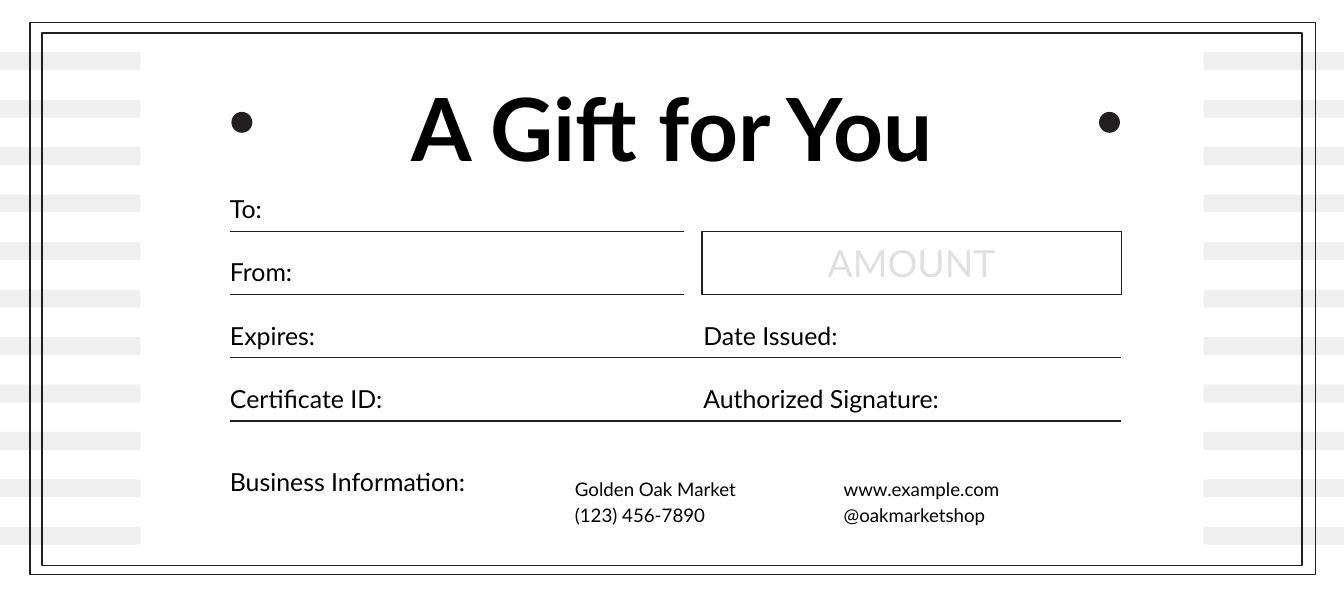
import pptx
import pptx.dml.color
import pptx.enum.shapes
import pptx.enum.text
import pptx.oxml.ns
import pptx.util
from lxml import etree

INK = pptx.dml.color.RGBColor(0x23, 0x1F, 0x20)
BLACK = pptx.dml.color.RGBColor(0x00, 0x00, 0x00)
STRIPE = pptx.dml.color.RGBColor(0xEF, 0xEF, 0xEF)
PALE = pptx.dml.color.RGBColor(0xE0, 0xE0, 0xE0)

FONT = "Lato"
WIDTH, HEIGHT = 9, 4
LABEL_SIZE, DETAIL_SIZE = 12, 9
LABEL_HEIGHT = 0.2
LINE_WIDTH = pptx.util.Pt(0.75)

SHAPE = pptx.enum.shapes.MSO_SHAPE
ALIGN = pptx.enum.text.PP_ALIGN
ANCHOR = pptx.enum.text.MSO_ANCHOR


def inches(*lengths):
    return [pptx.util.Inches(length) for length in lengths]


def add_shape(slide, kind, box, fill=None, outline=None):
    shape = slide.shapes.add_shape(kind, *inches(*box))
    shape.shadow.inherit = False
    if fill is None:
        shape.fill.background()
    else:
        shape.fill.solid()
        shape.fill.fore_color.rgb = fill
    if outline is None:
        shape.line.fill.background()
    else:
        shape.line.color.rgb = outline
        shape.line.width = LINE_WIDTH
    return shape


def write(shape, text, size, color=BLACK, bold=False, align=ALIGN.LEFT,
          spacing=1.0, margin=0, anchor=ANCHOR.TOP):
    frame = shape.text_frame
    frame.word_wrap = True
    frame.vertical_anchor = anchor
    frame.margin_left, frame.margin_top, frame.margin_right, frame.margin_bottom = inches(*[margin] * 4)
    frame.text = text
    for paragraph in frame.paragraphs:
        paragraph.alignment = align
        paragraph.line_spacing = spacing
        for run in paragraph.runs:
            run.font.name = FONT
            run.font.size = pptx.util.Pt(size)
            run.font.bold = bold
            run.font.color.rgb = color


def add_text(slide, box, text, size, **style):
    write(slide.shapes.add_textbox(*inches(*box)), text, size, **style)


def add_rule(slide, left, right, y):
    rule = slide.shapes.add_connector(
        pptx.enum.shapes.MSO_CONNECTOR.STRAIGHT, *inches(left, y, right, y))
    rule.line.color.rgb = INK
    rule.line.width = LINE_WIDTH
    properties = rule._element.spPr
    etree.SubElement(properties, pptx.oxml.ns.qn("a:effectLst"))


def add_stripes(slide, box, count=11, thickness=0.12):
    left, top, width, height = box
    pitch = (height - thickness) / (count - 1)
    for row in range(count):
        add_shape(slide, SHAPE.RECTANGLE, (left, top + row * pitch, width, thickness), fill=STRIPE)


def add_frame(slide):
    for box in ((0.2, 0.15, 8.61, 3.7), (0.28, 0.22, 8.44, 3.57)):
        add_shape(slide, SHAPE.RECTANGLE, box, outline=INK)


def add_title(slide, box, dot=0.14):
    left, top, width, height = box
    add_text(slide, box, "A Gift for You", 42, bold=True, align=ALIGN.CENTER, margin=0.1)
    for x in (left + 0.01, left + width - dot + 0.04):
        add_shape(slide, SHAPE.OVAL, (x, top + 0.35, dot, dot), fill=INK)


def add_form(slide, box):
    """Rows of labels above rules, with the amount box beside the second row."""
    left, top, width, height = box
    rows = (("To:",), ("From:",), ("Expires:", "Date Issued:"),
            ("Certificate ID:", "Authorized Signature:"))
    drop = 0.25  # from the top of a label to its rule
    pitch = (height - drop) / (len(rows) - 1)
    right_column = left + 3.17
    for index, labels in enumerate(rows):
        label_top = top + index * pitch
        for x, label in zip((left, right_column), labels):
            add_text(slide, (x, label_top, 2.8, LABEL_HEIGHT), label, LABEL_SIZE)
        rule_width = width if len(labels) == 2 else 3.04
        add_rule(slide, left, left + rule_width, label_top + drop)

    # Amount box
    amount = add_shape(slide, SHAPE.RECTANGLE,
                       (left + 3.16, top + drop, width - 3.16, pitch), outline=INK)
    write(amount, "AMOUNT", 18, color=PALE, align=ALIGN.CENTER, anchor=ANCHOR.MIDDLE)


def add_business(slide, box):
    left, top, width, height = box
    add_text(slide, (left, top, 2.07, LABEL_HEIGHT), "Business Information:", LABEL_SIZE)
    details = ((2.31, 1.55, "Golden Oak Market\n(123) 456-7890"),
               (4.11, 1.86, "www.example.com\n@oakmarketshop"))
    for offset, column_width, text in details:
        add_text(slide, (left + offset, top + 0.05, column_width, height - 0.05),
                 text, DETAIL_SIZE, spacing=1.15)


def main():
    presentation = pptx.Presentation()
    presentation.slide_width, presentation.slide_height = inches(WIDTH, HEIGHT)
    slide = presentation.slides.add_slide(presentation.slide_layouts[6])

    # Striped sides and double border
    stripe_width = 0.94
    for left in (0, WIDTH - stripe_width):
        add_stripes(slide, (left, 0.35, stripe_width, 3.3))
    add_frame(slide)

    # Certificate content
    add_title(slide, (1.54, 0.4, 5.92, 0.91))
    add_form(slide, (1.54, 1.3, 5.97, 1.52))
    add_business(slide, (1.54, 3.13, 5.97, 0.38))

    presentation.save("out.pptx")


if __name__ == "__main__":
    main()
